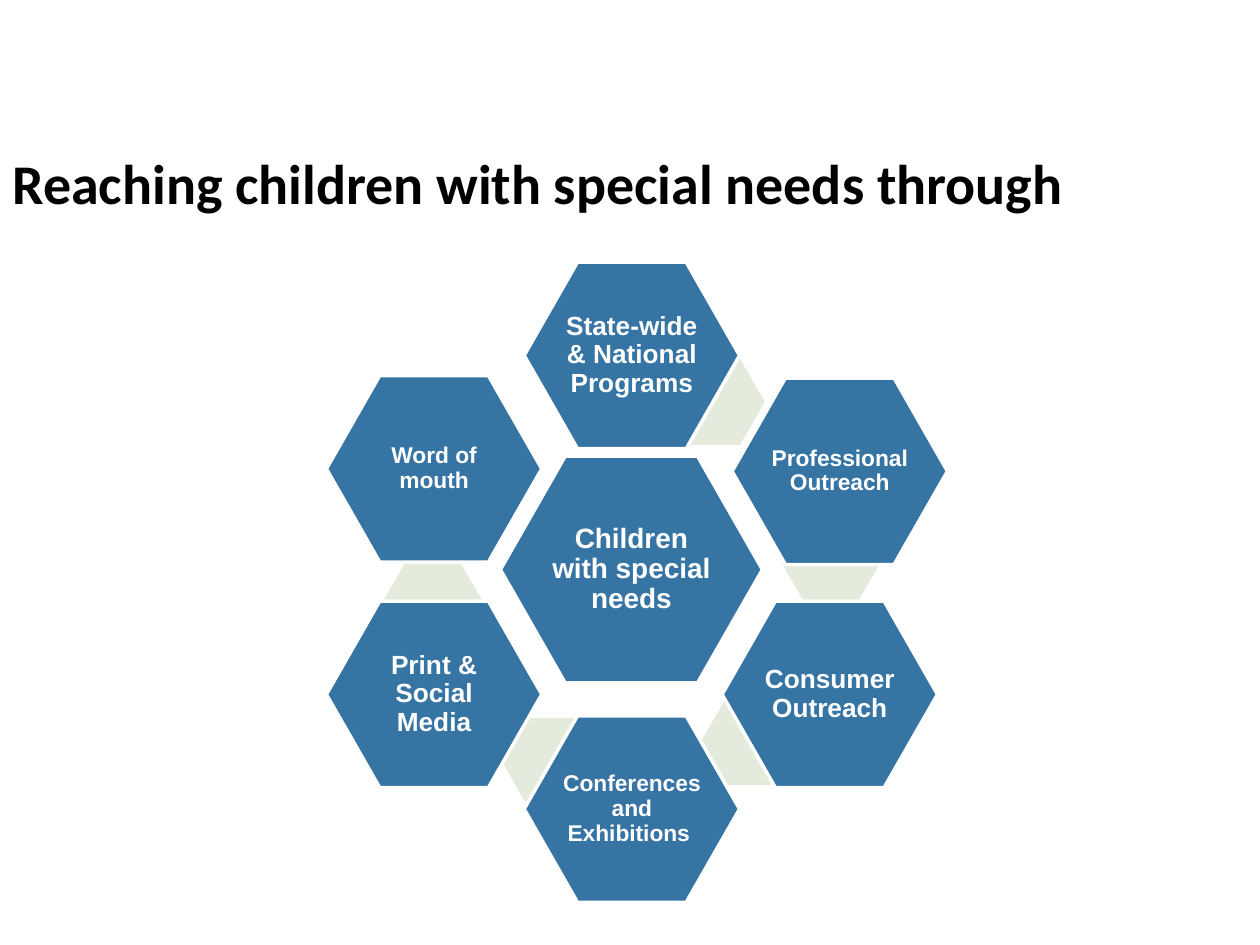
from pptx import Presentation
from pptx.dml.color import RGBColor
from pptx.enum.shapes import MSO_SHAPE as Shape
from pptx.enum.text import MSO_ANCHOR as Anchor, PP_ALIGN as Align
from pptx.util import Pt

BLUE = RGBColor(0x36, 0x74, 0xA3)
PALE = RGBColor(0xE4, 0xEB, 0xDC)
WHITE = RGBColor(0xFF, 0xFF, 0xFF)
BLACK = RGBColor(0x00, 0x00, 0x00)

HUB_SIZE = (149.8, 129.6)
CHANNEL_SIZE = (123.1, 106.6)
LINK_SIZE = (56.9, 49)

HUB = ("Children with special needs", 16, (99.4, 110.9))
CHANNELS = [
    ("State-wide & National Programs", 15, (113, 0), (193.7, 55.4)),
    ("Professional Outreach", 13, (231.8, 66.2), (259.9, 146.9)),
    ("Consumer Outreach", 15, (226.1, 193.7), (213.8, 249.8)),
    ("Conferences and Exhibitions ", 13, (113, 259.2), (100.1, 260.6)),
    ("Print & Social Media", 15, (0, 193.7), (32.4, 169.2)),
    ("Word of mouth", 13, (0, 64.8), None),
]


def style_font(para, name, size, color):
    """Make every run of a paragraph bold in the given font."""
    for span in para.runs:
        span.font.name = name
        span.font.size = Pt(size)
        span.font.bold = True
        span.font.color.rgb = color


def add_title(page, left, top, width, height):
    """Place the heading at the bottom of its box."""
    box = page.shapes.add_textbox(Pt(left), Pt(top), Pt(width), Pt(height))
    frame = box.text_frame
    frame.word_wrap = True
    frame.vertical_anchor = Anchor.BOTTOM
    frame.text = "Reaching children with special needs through"
    style_font(frame.paragraphs[0], "Calibri", 32, BLACK)


def add_hexagon(page, left, top, size, fill, point):
    """Draw a plain hexagon whose side points have the given depth."""
    width, height = size
    hexagon = page.shapes.add_shape(
        Shape.HEXAGON, Pt(left), Pt(top), Pt(width), Pt(height))
    hexagon.adjustments[0] = point
    hexagon.shadow.inherit = False
    hexagon.fill.solid()
    hexagon.fill.fore_color.rgb = fill
    hexagon.line.fill.background()
    return hexagon


def add_labelled_hexagon(page, left, top, size, label, font_size):
    """Draw a blue hexagon with a white outline and a centred label."""
    hexagon = add_hexagon(page, left, top, size, BLUE, 0.286)
    hexagon.line.color.rgb = WHITE
    hexagon.line.width = Pt(2)
    frame = hexagon.text_frame
    frame.word_wrap = True
    frame.vertical_anchor = Anchor.MIDDLE
    frame.margin_left = frame.margin_right = Pt(1.5)
    frame.margin_top = frame.margin_bottom = Pt(1.5)
    frame.text = label
    para = frame.paragraphs[0]
    para.alignment = Align.CENTER
    para.line_spacing = 0.9
    style_font(para, "Arial", font_size, WHITE)


def add_hexagon_ring(page, left, top):
    """Place the hub and the ring of channels with the links behind them."""
    label, font_size, (x, y) = HUB
    add_labelled_hexagon(page, left + x, top + y, HUB_SIZE, label, font_size)
    for label, font_size, (x, y), link in CHANNELS:
        if link:
            add_hexagon(page, left + link[0], top + link[1], LINK_SIZE, PALE, 0.289)
        add_labelled_hexagon(page, left + x, top + y, CHANNEL_SIZE, label, font_size)


def main():
    """Build and save the deck."""
    deck = Presentation()
    deck.slide_width, deck.slide_height = Pt(720), Pt(540)
    page = deck.slides.add_slide(deck.slide_layouts[6])
    add_title(page, 0, 31, 720, 95.8)
    add_hexagon_ring(page, 186.5, 149.8)
    deck.save("out.pptx")


if __name__ == "__main__":
    main()
